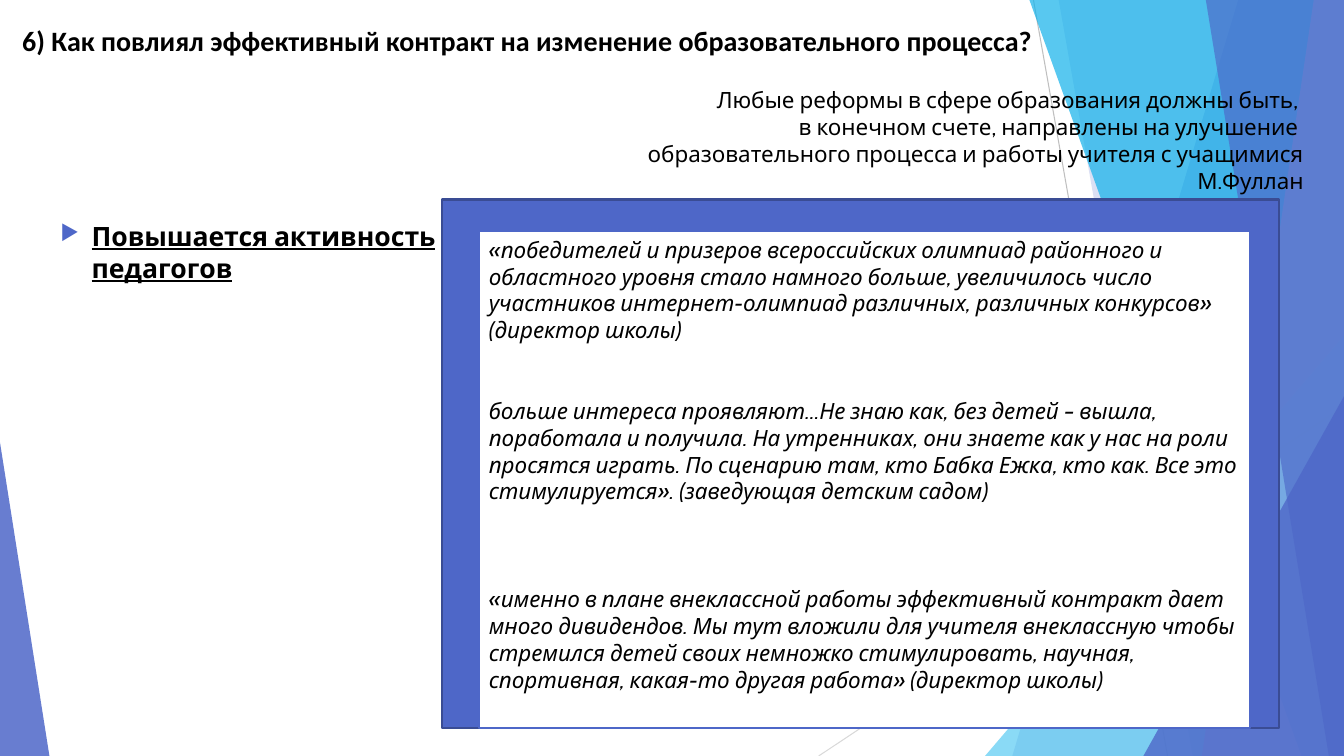
from lxml.etree import SubElement
from pptx import Presentation
from pptx.dml.color import RGBColor
from pptx.enum.shapes import MSO_CONNECTOR, MSO_SHAPE
from pptx.enum.text import MSO_ANCHOR, PP_ALIGN
from pptx.oxml.ns import qn
from pptx.util import Inches, Pt

WIDTH, HEIGHT = 13.33, 7.5
FONT = "Cabin"
COLORS = {
    "blue": "4E67C8", "edge": "3A4C94", "sky": "5ECCF3", "cyan": "12B2EB",
    "lavender": "95A4DE", "gray": "BFBFBF", "light gray": "D9D9D9",
    "black": "000000", "white": "FFFFFF",
}

TITLE = "6) Как повлиял эффективный контракт на изменение образовательного процесса?"
BULLET = "Повышается активность педагогов"
EPIGRAPH = [
    "Любые реформы в сфере образования должны быть, ",
    "в конечном счете, направлены на улучшение ",
    "образовательного процесса и работы учителя с учащимися",
    "М.Фуллан",
]
# Each quotation with the number of empty lines above it
QUOTES = [
    ("«победителей и призеров всероссийских олимпиад районного и областного уровня "
     "стало намного больше, увеличилось число участников интернет-олимпиад различных, "
     "различных конкурсов» (директор школы)", 0),
    ("больше интереса проявляют…Не знаю как, без детей – вышла, поработала и получила. "
     "На утренниках, они знаете как у нас на роли просятся играть. По сценарию там, "
     "кто Бабка Ежка, кто как. Все это стимулируется». (заведующая детским садом)", 2),
    ("«именно в плане внеклассной работы эффективный контракт дает много дивидендов. "
     "Мы тут вложили для учителя внеклассную чтобы стремился детей своих немножко "
     "стимулировать, научная, спортивная, какая-то другая работа» (директор школы)", 3),
]
QUOTE_LINE = 19.2

# Start, end, color
RAYS = [
    ((10.25, 0), (11.58, HEIGHT), "gray"),
    ((WIDTH, 4.03), (8.12, HEIGHT), "light gray"),
]
# Facets reach the right edge: x at the top, x at the bottom, color, opacity.
# Wedges stand on the bottom edge: left, width, height, apex, color, opacity.
BACKDROP = [
    ("facet", (12.28, 10.04), "blue", 30),
    ("facet", (10.5, 11.83), "blue", 20),
    ("wedge", (9.77, 3.56, 4.17, 1), "sky", 72),
    ("facet", (10.21, 12.91), "cyan", 70),
    ("facet", (13.03, 11.92), "lavender", 70),
    ("facet", (11.96, 13.18), "blue", 65),
    ("wedge", (11.34, 1.99, 3.57, 1), "blue", 80),
    ("wedge", (0, 0.49, 3.11, 0), "blue", 85),
]


def rgb(name):
    return RGBColor.from_string(COLORS[name])


def inches(*values):
    return [Inches(value) for value in values]


def paint(shape, fill, opacity=100, line=None):
    shape.shadow.inherit = False
    shape.fill.solid()
    shape.fill.fore_color.rgb = rgb(fill)
    if opacity < 100:
        color = shape.fill._xPr.find(qn("a:solidFill"))[0]
        SubElement(color, qn("a:alpha"), val=str(opacity * 1000))
    if line:
        shape.line.color.rgb = rgb(line)
        shape.line.width = Pt(1.5)
    else:
        shape.line.fill.background()


def write(frame, texts, size, font=FONT, align=PP_ALIGN.LEFT, bold=False, italic=False):
    frame.word_wrap = True
    frame.vertical_anchor = MSO_ANCHOR.TOP
    for index, text in enumerate(texts):
        paragraph = frame.paragraphs[0] if index == 0 else frame.add_paragraph()
        paragraph.text = text
        paragraph.alignment = align
        paragraph.font.name = font
        paragraph.font.size = Pt(size)
        paragraph.font.bold = bold
        paragraph.font.italic = italic
        paragraph.font.color.rgb = rgb("black")
    return frame.paragraphs


def add_ray(shapes, start, end, color):
    ray = shapes.add_connector(MSO_CONNECTOR.STRAIGHT, *inches(*start, *end))
    ray.line.color.rgb = rgb(color)
    ray.line.width = Pt(0.75)
    SubElement(ray._element.spPr, qn("a:effectLst"))


def add_facet(shapes, top_x, bottom_x):
    builder = shapes.build_freeform(*inches(top_x, 0))
    corners = [(WIDTH, 0), (WIDTH, HEIGHT), (bottom_x, HEIGHT)]
    builder.add_line_segments([inches(*corner) for corner in corners], close=True)
    return builder.convert_to_shape()


def add_wedge(shapes, left, width, height, apex):
    box = inches(left, HEIGHT - height, width, height)
    wedge = shapes.add_shape(MSO_SHAPE.ISOSCELES_TRIANGLE, *box)
    wedge.adjustments[0] = apex
    return wedge


def add_bullet(paragraph):
    properties = paragraph._p.get_or_add_pPr()
    properties.set("marL", str(Inches(0.81)))
    properties.set("indent", str(Inches(-0.31)))
    color = SubElement(properties, qn("a:buClr"))
    SubElement(color, qn("a:srgbClr"), val=COLORS["blue"])
    SubElement(properties, qn("a:buSzPct"), val="80000")
    SubElement(properties, qn("a:buChar"), char="▶")


def main():
    presentation = Presentation()
    presentation.slide_width, presentation.slide_height = inches(WIDTH, HEIGHT)
    slide = presentation.slides.add_slide(presentation.slide_layouts[5])
    shapes = slide.shapes

    for ray in RAYS:
        add_ray(shapes, *ray)
    makers = {"facet": add_facet, "wedge": add_wedge}
    for kind, geometry, color, opacity in BACKDROP:
        paint(makers[kind](shapes, *geometry), color, opacity)

    title = shapes.title
    title.left, title.top, title.width, title.height = inches(0.12, 0.18, 12.87, 0.76)
    write(title.text_frame, [TITLE], 20, font="Calibri", bold=True)
    shapes._spTree.append(title._element)  # in front of the backdrop

    activity = shapes.add_textbox(*inches(0, 2.13, 4.73, 3.28))
    paragraph = write(activity.text_frame, [BULLET], 19, bold=True)[0]
    paragraph.font.underline = True
    add_bullet(paragraph)

    frame = shapes.add_shape(MSO_SHAPE.RECTANGLE, *inches(4.38, 1.98, 8.31, 5.24))
    paint(frame, "blue", line="edge")
    panel = shapes.add_shape(MSO_SHAPE.RECTANGLE, *inches(4.75, 2.29, 7.65, 4.93))
    paint(panel, "white", line="blue")
    quotes = write(panel.text_frame, [text for text, _ in QUOTES], 16, italic=True)
    for paragraph, (_, empty_lines) in zip(quotes, QUOTES):
        paragraph.space_before = Pt(empty_lines * QUOTE_LINE)

    epigraph = shapes.add_textbox(*inches(5.81, 0.81, 7.22, 1.18))
    write(epigraph.text_frame, EPIGRAPH, 16, align=PP_ALIGN.RIGHT)

    presentation.save("out.pptx")


if __name__ == "__main__":
    main()
